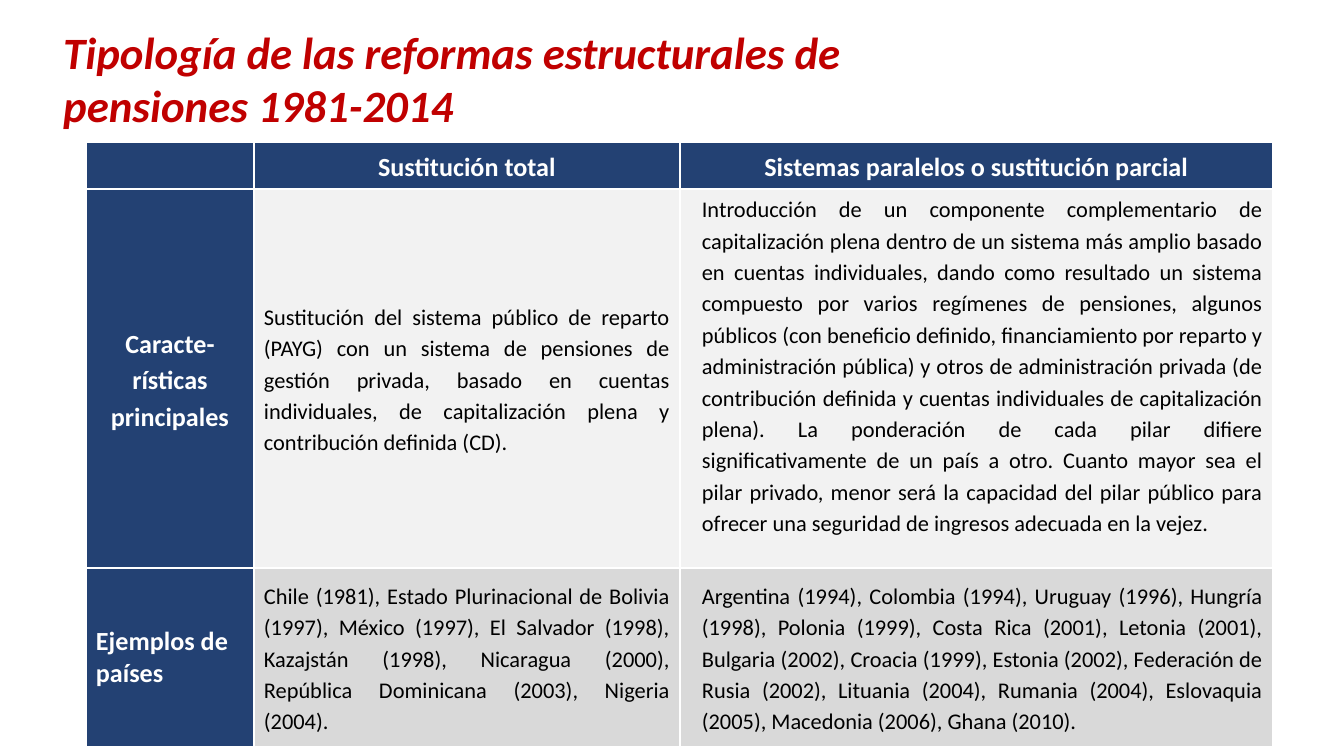
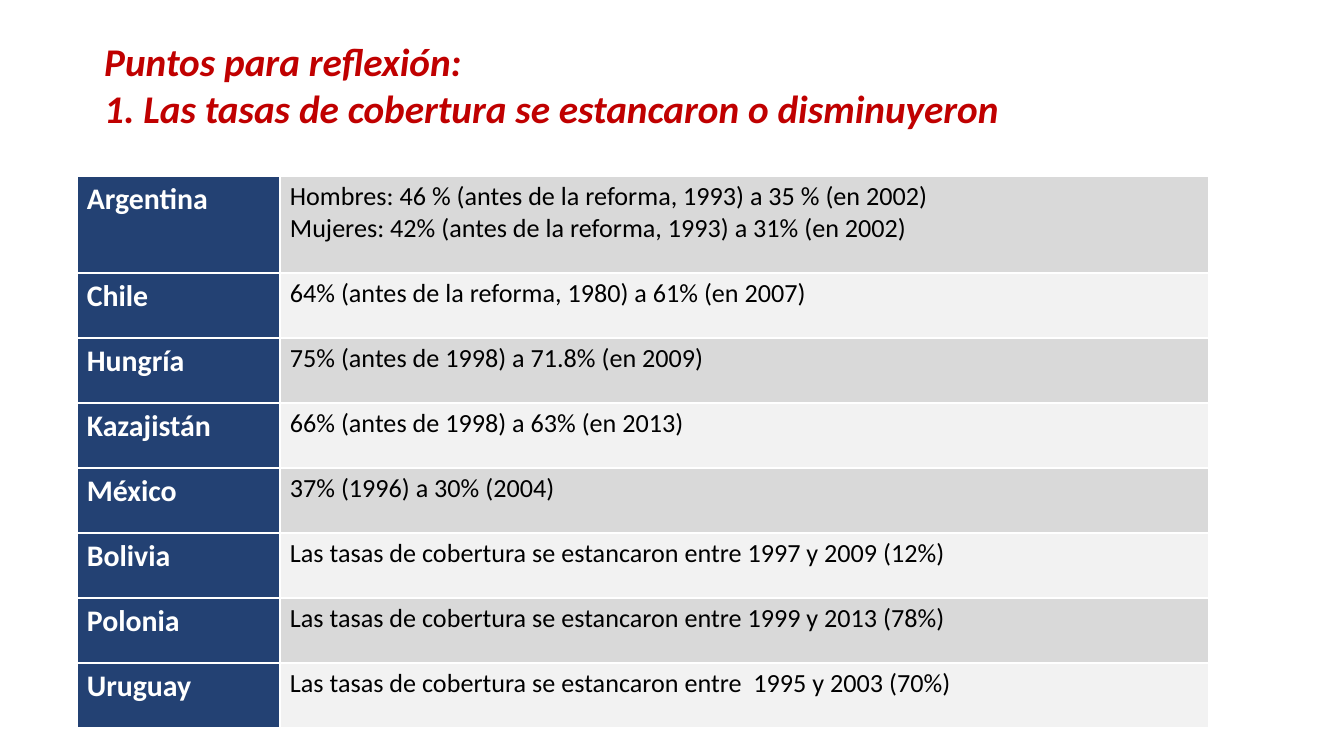
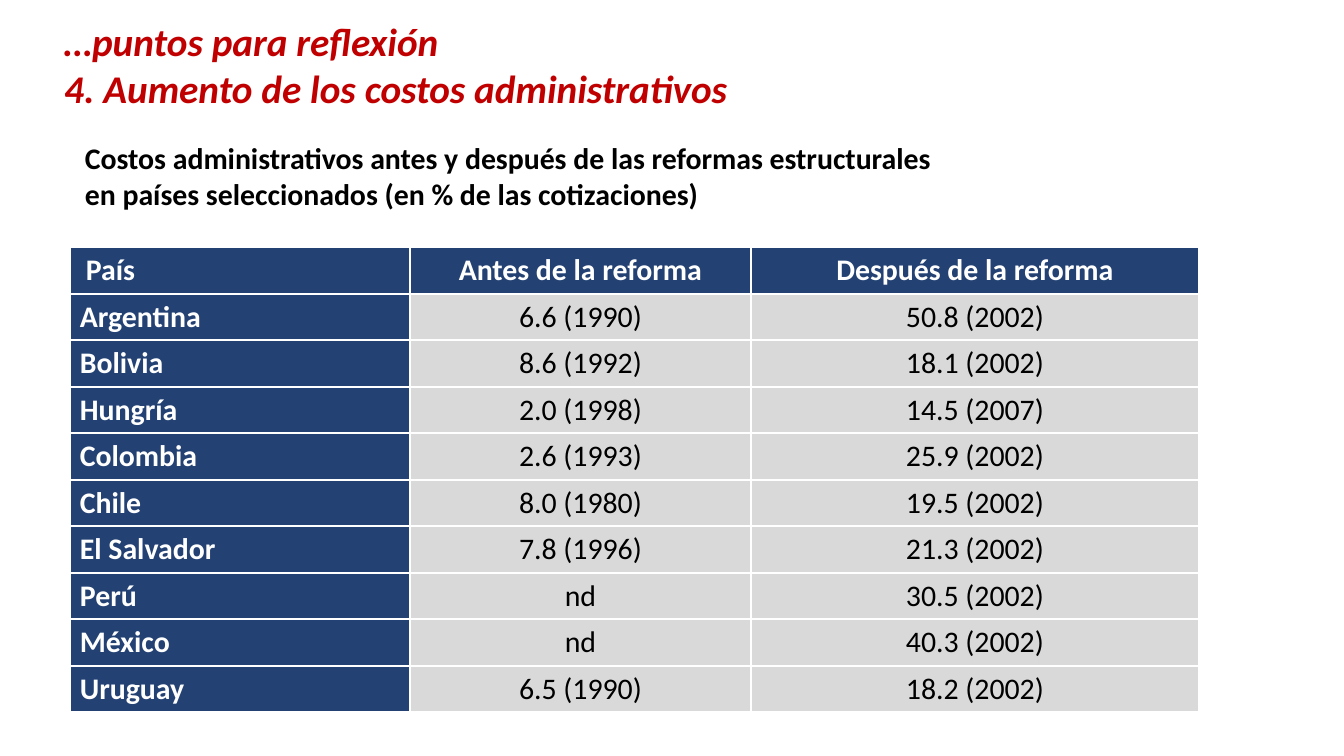
from pptx import Presentation
from pptx.dml.color import RGBColor
from pptx.enum.text import MSO_ANCHOR, PP_ALIGN
from pptx.util import Pt

LEFT, CENTER, JUSTIFY = PP_ALIGN.LEFT, PP_ALIGN.CENTER, PP_ALIGN.JUSTIFY
TOP, MIDDLE = MSO_ANCHOR.TOP, MSO_ANCHOR.MIDDLE

EMU_PER_INCH = 914400
PX_PER_INCH = 134.4
FONT = "Calibri"
RED, NAVY, BLACK, WHITE = "C00000", "234173", "000000", "FFFFFF"
LIGHT_GRAY, GRAY = "F2F2F2", "D9D9D9"

REFORM_HEADERS = ["", "Sustitución total", "Sistemas paralelos o sustitución parcial"]
FEATURES = [
    "Sustitución del sistema público de reparto (PAYG) con un sistema de pensiones de "
    "gestión privada, basado en cuentas individuales, de capitalización plena y "
    "contribución definida (CD).",
    "Introducción de un componente complementario de capitalización plena dentro de un "
    "sistema más amplio basado en cuentas individuales, dando como resultado un sistema "
    "compuesto por varios regímenes de pensiones, algunos públicos (con beneficio "
    "definido, financiamiento por reparto y administración pública) y otros de "
    "administración privada (de contribución definida y cuentas individuales de "
    "capitalización plena). La ponderación de cada pilar difiere significativamente de "
    "un país a otro. Cuanto mayor sea el pilar privado, menor será la capacidad del "
    "pilar público para ofrecer una seguridad de ingresos adecuada en la vejez.",
]
EXAMPLES = [
    "Chile (1981), Estado Plurinacional de Bolivia (1997), México (1997), El Salvador "
    "(1998), Kazajstán (1998), Nicaragua (2000), República Dominicana (2003), Nigeria "
    "(2004).",
    "Argentina (1994), Colombia (1994), Uruguay (1996), Hungría (1998), Polonia (1999), "
    "Costa Rica (2001), Letonia (2001), Bulgaria (2002), Croacia (1999), Estonia (2002), "
    "Federación de Rusia (2002), Lituania (2004), Rumania (2004), Eslovaquia (2005), "
    "Macedonia (2006), Ghana (2010).",
]
COVERAGE = [
    ("Argentina", "Hombres: 46 % (antes de la reforma, 1993) a 35 % (en 2002)\n"
                  "Mujeres: 42% (antes de la reforma, 1993) a 31% (en 2002)"),
    ("Chile", "64% (antes de la reforma, 1980) a 61% (en 2007)"),
    ("Hungría", "75% (antes de 1998) a 71.8% (en 2009)"),
    ("Kazajistán", "66% (antes de 1998) a 63% (en 2013)"),
    ("México", "37% (1996) a 30% (2004)"),
    ("Bolivia", "Las tasas de cobertura se estancaron entre 1997 y 2009 (12%)"),
    ("Polonia", "Las tasas de cobertura se estancaron entre 1999 y 2013 (78%)"),
    ("Uruguay", "Las tasas de cobertura se estancaron entre  1995 y 2003 (70%)"),
]
COSTS = [
    ("País", "Antes de la reforma", "Después de la reforma"),
    ("Argentina", "6.6 (1990)", "50.8 (2002)"),
    ("Bolivia", "8.6 (1992)", "18.1 (2002)"),
    ("Hungría", "2.0 (1998)", "14.5 (2007)"),
    ("Colombia", "2.6 (1993)", "25.9 (2002)"),
    ("Chile", "8.0 (1980)", "19.5 (2002)"),
    ("El Salvador", "7.8 (1996)", "21.3 (2002)"),
    ("Perú", "nd", "30.5 (2002)"),
    ("México", "nd", "40.3 (2002)"),
    ("Uruguay", "6.5 (1990)", "18.2 (2002)"),
]


def px(length):
    return round(length * EMU_PER_INCH / PX_PER_INCH)


def color(hex_string):
    return RGBColor.from_string(hex_string)


def style_text(frame, size, hex_color, bold=False, italic=False, align=LEFT, spacing=1.0):
    for paragraph in frame.paragraphs:
        paragraph.alignment = align
        paragraph.line_spacing = spacing
        font = paragraph.font
        font.name, font.size, font.bold, font.italic = FONT, Pt(size), bold, italic
        font.color.rgb = color(hex_color)


def add_text(slide, left, top, width, height, text, anchor=TOP):
    box = slide.shapes.add_textbox(px(left), px(top), px(width), px(height))
    frame = box.text_frame
    frame.word_wrap = True
    frame.vertical_anchor = anchor
    frame.text = text
    return frame


def add_title(slide, left, top, width, height, text, size):
    frame = add_text(slide, left, top, width, height, text, MIDDLE)
    style_text(frame, size, RED, bold=True, italic=True)


def add_table(slide, left, top, widths, heights, has_header):
    """Add a table whose style draws white rules, thicker below a header."""
    table = slide.shapes.add_table(
        len(heights), len(widths), px(left), px(top), px(sum(widths)), px(sum(heights))
    ).table
    table.first_row = has_header
    table.horz_banding = False
    for column, width in zip(table.columns, widths):
        column.width = px(width)
    for row, height in zip(table.rows, heights):
        row.height = px(height)
    return table


def fill_cell(cell, text, fill, size, align=LEFT, anchor=TOP, spacing=1.0, margin=0):
    """Write a cell; navy cells are headings in bold white."""
    cell.fill.solid()
    cell.fill.fore_color.rgb = color(fill)
    cell.margin_left = cell.margin_right = px(10)
    cell.margin_top = cell.margin_bottom = px(margin)
    cell.vertical_anchor = anchor
    cell.text = text
    is_heading = fill == NAVY
    style_text(cell.text_frame, size, WHITE if is_heading else BLACK,
               bold=is_heading, align=align, spacing=spacing)


def build_typology(slide):
    add_title(slide, 50, 15, 990, 126,
              "Tipología de las reformas estructurales de pensiones 1981-2014", 24)
    table = add_table(slide, 86, 142, [168, 426, 593], [47, 379, 179], True)
    for column, header in enumerate(REFORM_HEADERS):
        fill_cell(table.cell(0, column), header, NAVY, 14, CENTER, MIDDLE, 1.15)
    fill_cell(table.cell(1, 0), "Caracte-rísticas principales", NAVY, 14, CENTER, MIDDLE, 1.15)
    fill_cell(table.cell(2, 0), "Ejemplos de países", NAVY, 14, LEFT, MIDDLE)
    for row, (texts, fill) in enumerate([(FEATURES, LIGHT_GRAY), (EXAMPLES, GRAY)], 1):
        for column, text in enumerate(texts, 1):
            fill_cell(table.cell(row, column), text, fill, 12, JUSTIFY, MIDDLE, 1.15)
        table.cell(row, 2).margin_left = px(22)
    table.cell(1, 2).margin_bottom = px(27)


def build_coverage(slide):
    add_title(slide, 91, 21, 972, 126,
              "Puntos para reflexión:\v1. Las tasas de cobertura se estancaron o disminuyeron", 21)
    table = add_table(slide, 77, 176, [203, 929], [97] + [65] * 7, False)
    for row, (country, rates) in enumerate(COVERAGE):
        fill_cell(table.cell(row, 0), country, NAVY, 16, margin=5)
        fill_cell(table.cell(row, 1), rates, LIGHT_GRAY if row % 2 else GRAY, 14, margin=5)


def build_costs(slide):
    add_title(slide, 51, 23, 907, 83,
              "…puntos para reflexión\v4. Aumento de los costos administrativos", 21)
    subtitle = add_text(slide, 5, 133, 946, 86,
                        "Costos administrativos antes y después de las reformas estructurales "
                        "en países seleccionados (en % de las cotizaciones)")
    subtitle.margin_left = px(80)
    style_text(subtitle, 16, BLACK, bold=True)
    table = add_table(slide, 70, 247, [340, 341, 448], [47, 46] * 5, True)
    for row, texts in enumerate(COSTS):
        for column, text in enumerate(texts):
            fill = NAVY if row == 0 or column == 0 else GRAY
            align = CENTER if column else JUSTIFY
            fill_cell(table.cell(row, column), text, fill, 16, align, spacing=1.15)
    table.cell(0, 0).margin_left = px(16)


def main():
    presentation = Presentation()
    presentation.slide_width = px(1344)
    presentation.slide_height = px(756)
    blank = presentation.slide_layouts[6]
    for build in (build_typology, build_coverage, build_costs):
        build(presentation.slides.add_slide(blank))
    presentation.save("out.pptx")


if __name__ == "__main__":
    main()
